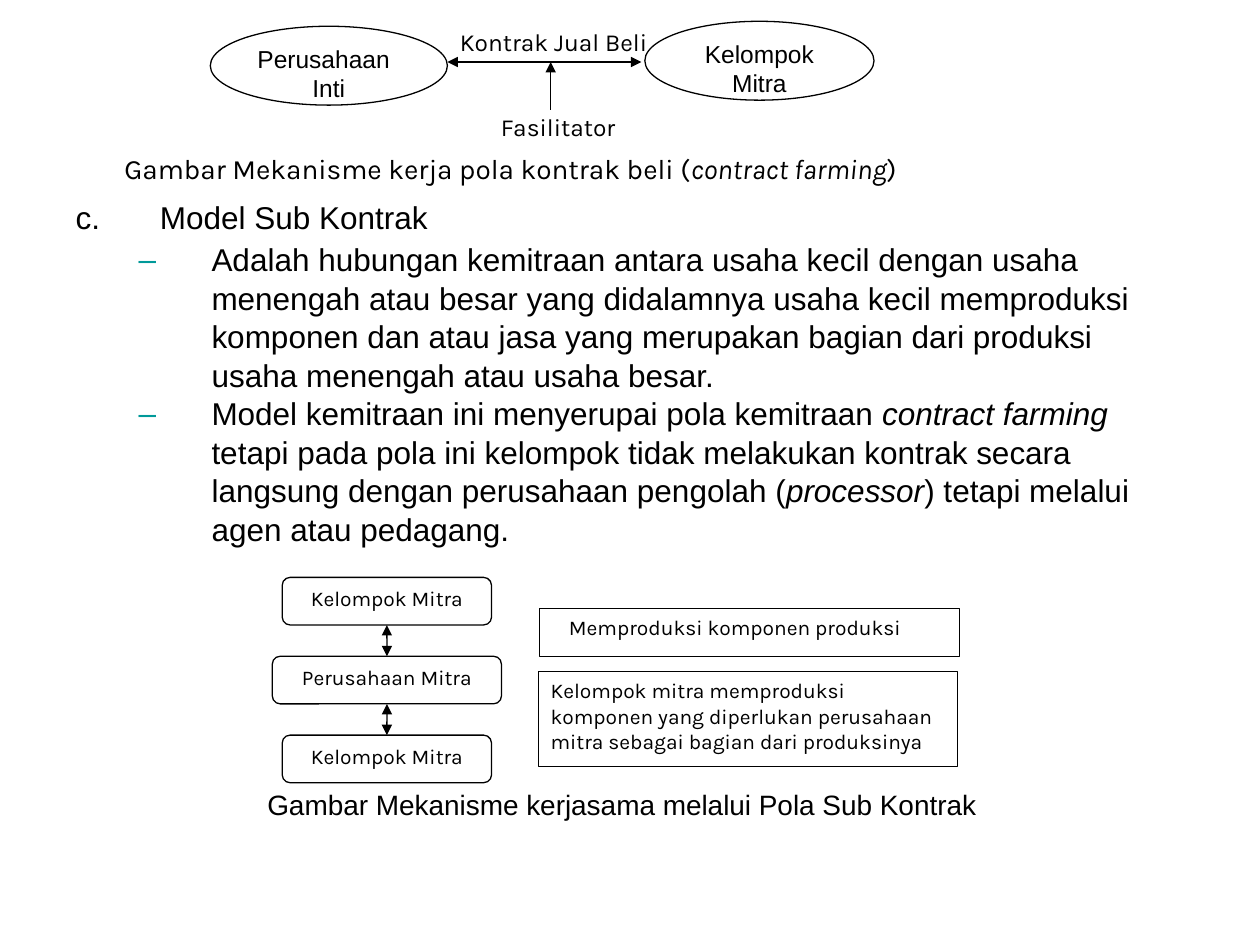
from dataclasses import dataclass

from lxml.etree import SubElement
from pptx import Presentation
from pptx.dml.color import RGBColor
from pptx.enum.shapes import MSO_CONNECTOR, MSO_SHAPE
from pptx.enum.text import MSO_ANCHOR, MSO_AUTO_SIZE, PP_ALIGN
from pptx.oxml.ns import qn
from pptx.util import Cm, Pt


@dataclass(frozen=True)
class Theme:
    ink: RGBColor = RGBColor(0x00, 0x00, 0x00)
    dash: RGBColor = RGBColor(0x00, 0x99, 0x99)
    sans: str = "Arial"
    label: str = "Karla"
    body_size: Pt = Pt(18)
    caption_size: Pt = Pt(16)
    node_size: Pt = Pt(14)
    box_size: Pt = Pt(12)
    line_width: Pt = Pt(0.75)


theme = Theme()


def add_runs(paragraph, runs, font_name, size):
    """Add (text, italic) pairs to the paragraph."""
    for text, italic in runs:
        run = paragraph.add_run()
        run.text = text
        run.font.name = font_name
        run.font.size = size
        run.font.italic = italic
        run.font.color.rgb = theme.ink


def add_arrow(container, start, end, heads):
    connector = container.add_connector(
        MSO_CONNECTOR.STRAIGHT, *(Cm(value) for value in start + end))
    connector.line.color.rgb = theme.ink
    connector.line.width = theme.line_width
    for head in heads:
        SubElement(connector.line._get_or_add_ln(), qn(f"a:{head}"), type="triangle")
    SubElement(connector._element.spPr, qn("a:effectLst"))
    return connector


presentation = Presentation()
presentation.slide_width = Cm(25.4)
presentation.slide_height = Cm(19.05)
slide = presentation.slides.add_slide(presentation.slide_layouts[1])
title = slide.shapes.title._element
title.getparent().remove(title)

# Numbered heading with two dashed points
body = slide.placeholders[1]
body.left, body.top, body.width, body.height = Cm(1.27), Cm(3.86), Cm(22.86), Cm(13.16)
body.text_frame.auto_size = MSO_AUTO_SIZE.NONE
body.text_frame.vertical_anchor = MSO_ANCHOR.TOP
points = [
    (0, 0, [("Model Sub Kontrak", False)]),
    (1, 2, [("Adalah hubungan kemitraan antara usaha kecil dengan usaha menengah "
             "atau besar yang didalamnya usaha kecil memproduksi komponen dan atau "
             "jasa yang merupakan bagian dari produksi usaha menengah atau usaha "
             "besar.", False)]),
    (1, 0, [("Model kemitraan ini menyerupai pola kemitraan ", False),
            ("contract farming", True),
            (" tetapi pada pola ini kelompok tidak melakukan kontrak secara langsung "
             "dengan perusahaan pengolah (", False),
            ("processor", True),
            (") tetapi melalui agen atau pedagang.", False)]),
]
for index, (level, space_before, runs) in enumerate(points):
    paragraph = body.text_frame.add_paragraph() if index else body.text_frame.paragraphs[0]
    paragraph.level = level
    paragraph.alignment = PP_ALIGN.LEFT
    paragraph.line_spacing = Pt(22)
    paragraph.space_before = Pt(space_before)
    paragraph.space_after = Pt(0)
    properties = paragraph._p.get_or_add_pPr()
    margin, indent = (Cm(2.74), Cm(-1.47)) if level else (Cm(1.7), Cm(-1.7))
    properties.set("marL", str(margin))
    properties.set("indent", str(indent))
    bullet_color = SubElement(properties, qn("a:buClr"))
    SubElement(bullet_color, qn("a:srgbClr"), val=str(theme.dash if level else theme.ink))
    SubElement(properties, qn("a:buFont"), typeface=theme.sans)
    if level:
        SubElement(properties, qn("a:buChar"), char="–")
    else:
        SubElement(properties, qn("a:buAutoNum"), type="alphaLcPeriod", startAt="3")
    add_runs(paragraph, runs, theme.sans, theme.body_size)

# Outlined shapes: contract parties, subcontract chain, explanations
contract = slide.shapes.add_group_shape().shapes
chain_center, chain_top, chain_pitch, box_height = 7.8, 11.64, 1.59, 0.96
left, center = PP_ALIGN.LEFT, PP_ALIGN.CENTER
outlined = [
    (contract, MSO_SHAPE.OVAL, (4.24, 0.53, 4.78, 1.59),
     [("Perusahaan", left), ("Inti", center)], theme.sans, theme.node_size, 0),
    (contract, MSO_SHAPE.OVAL, (13, 0.43, 4.62, 1.59),
     [("Kelompok", center), ("Mitra", center)], theme.sans, theme.node_size, 0),
]
chain = [("Kelompok Mitra", 4.22), ("Perusahaan Mitra", 4.62), ("Kelompok Mitra", 4.22)]
for row, (text, width) in enumerate(chain):
    box = (chain_center - width / 2, chain_top + row * chain_pitch, width, box_height)
    outlined.append((slide.shapes, MSO_SHAPE.ROUNDED_RECTANGLE, box, [(text, center)],
                     theme.label, theme.box_size, 0))
explanations = [
    ("Memproduksi komponen produksi", (10.88, 12.27, 8.46, 0.96), 0.34),
    ("Kelompok mitra memproduksi komponen yang diperlukan perusahaan mitra "
     "sebagai bagian dari produksinya", (10.85, 13.54, 8.46, 1.91), 0),
]
for text, box, extra_inset in explanations:
    outlined.append((slide.shapes, MSO_SHAPE.RECTANGLE, box, [(text, left)],
                     theme.label, theme.box_size, extra_inset))

chain_boxes = []
for container, kind, box, lines, font_name, size, extra_inset in outlined:
    shape = container.add_shape(kind, *(Cm(value) for value in box))
    shape.shadow.inherit = False
    shape.fill.background()
    shape.line.color.rgb = theme.ink
    shape.line.width = theme.line_width
    frame = shape.text_frame
    frame.word_wrap = True
    frame.vertical_anchor = MSO_ANCHOR.TOP
    frame.margin_left = Cm(0.25 + extra_inset)
    for index, (text, alignment) in enumerate(lines):
        paragraph = frame.add_paragraph() if index else frame.paragraphs[0]
        paragraph.alignment = alignment
        add_runs(paragraph, [(text, False)], font_name, size)
    if kind == MSO_SHAPE.ROUNDED_RECTANGLE:
        chain_boxes.append(shape)

# Arrows
both_heads = ("headEnd", "tailEnd")
add_arrow(contract, (9.02, 1.25), (12.93, 1.25), both_heads)
add_arrow(contract, (11.1, 2.21), (11.1, 1.25), ("tailEnd",))
for upper, lower in zip(chain_boxes, chain_boxes[1:]):
    arrow = add_arrow(slide.shapes, (0, 0), (0, 0), both_heads)
    arrow.begin_connect(upper, 2)
    arrow.end_connect(lower, 0)

# Labels and captions
labels = [
    (contract, (9.85, 2.13, 3, 0.85), [("Fasilitator", False)], theme.label, theme.node_size),
    (contract, (9.02, 0.42, 4.5, 0.85), [("Kontrak Jual Beli", False)],
     theme.label, theme.node_size),
    (contract, (2.26, 2.88, 17.65, 1.02),
     [("Gambar Mekanisme kerja pola kontrak beli (", False),
      ("contract farming", True), (")", False)], theme.label, theme.caption_size),
    (slide.shapes, (5.14, 15.7, 15.18, 1.02),
     [("Gambar Mekanisme kerjasama melalui Pola Sub Kontrak", False)],
     theme.sans, theme.caption_size),
]
for container, box, runs, font_name, size in labels:
    shape = container.add_textbox(*(Cm(value) for value in box))
    shape.text_frame.word_wrap = True
    shape.text_frame.vertical_anchor = MSO_ANCHOR.MIDDLE
    add_runs(shape.text_frame.paragraphs[0], runs, font_name, size)

presentation.save("out.pptx")
